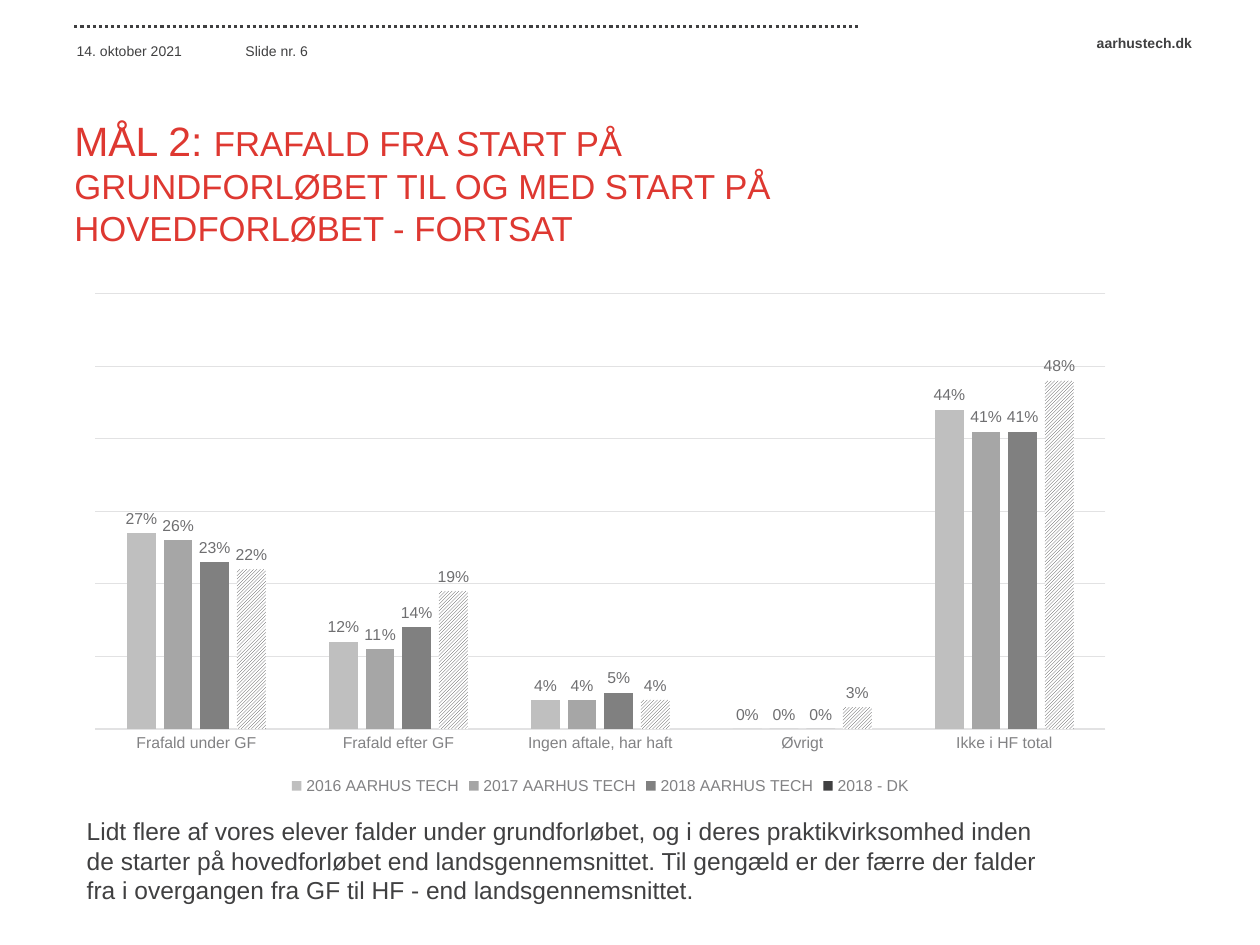
from lxml.etree import SubElement
from pptx import Presentation
from pptx.chart.data import CategoryChartData
from pptx.dml.color import RGBColor
from pptx.enum.chart import (XL_CHART_TYPE, XL_LABEL_POSITION,
                             XL_LEGEND_POSITION, XL_TICK_MARK)
from pptx.enum.dml import MSO_LINE, MSO_PATTERN
from pptx.enum.shapes import MSO_CONNECTOR
from pptx.enum.text import MSO_ANCHOR, PP_ALIGN
from pptx.oxml.ns import qn
from pptx.util import Inches, Pt

FACE = "Arial"
DARK = RGBColor(0x40, 0x40, 0x41)
RULE = RGBColor(0x3F, 0x3F, 0x40)
RED = RGBColor(0xDE, 0x38, 0x31)
AXIS = RGBColor(0x82, 0x82, 0x84)
LABEL = RGBColor(0x6F, 0x6F, 0x71)
GRID = RGBColor(0xE2, 0xE2, 0xE3)
WHITE = RGBColor(0xFF, 0xFF, 0xFF)

CATS = ["Frafald under GF", "Frafald efter GF", "Ingen aftale, har haft",
        "Øvrigt", "Ikke i HF total"]
SERIES = [
    ("2016 AARHUS TECH", (0.27, 0.12, 0.04, 0, 0.44), RGBColor(0xBF, 0xBF, 0xBF)),
    ("2017 AARHUS TECH", (0.26, 0.11, 0.04, 0, 0.41), RGBColor(0xA6, 0xA6, 0xA6)),
    ("2018 AARHUS TECH", (0.23, 0.14, 0.05, 0, 0.41), RGBColor(0x80, 0x80, 0x80)),
    ("2018 - DK", (0.22, 0.19, 0.04, 0.03, 0.48), DARK),
]


def set_font(font, size, color, bold=False):
    font.name = FACE
    font.size = Pt(size)
    font.bold = bold
    font.color.rgb = color


def add_text(slide, box, runs, color=DARK, bold=False, align=PP_ALIGN.LEFT,
             anchor=MSO_ANCHOR.TOP, inset=True):
    """Add one paragraph made of (text, size) runs."""
    frame = slide.shapes.add_textbox(*map(Inches, box)).text_frame
    frame.word_wrap = True
    frame.vertical_anchor = anchor
    if not inset:
        frame.margin_left = frame.margin_right = 0
        frame.margin_top = frame.margin_bottom = 0
    para = frame.paragraphs[0]
    para.alignment = align
    for text, size in runs:
        run = para.add_run()
        run.text = text
        set_font(run.font, size, color, bold)


def add_rule(slide, left, right, top):
    line = slide.shapes.add_connector(
        MSO_CONNECTOR.STRAIGHT, Inches(left), Inches(top), Inches(right), Inches(top))
    line.line.color.rgb = RULE
    line.line.width = Pt(1.75)
    line.line.dash_style = MSO_LINE.ROUND_DOT
    SubElement(line._element.spPr, qn("a:effectLst"))


def style_axes(chart):
    cat = chart.category_axis
    cat.major_tick_mark = cat.minor_tick_mark = XL_TICK_MARK.NONE
    set_font(cat.tick_labels.font, 9, AXIS)
    val = chart.value_axis
    val.visible = False
    val.minimum_scale, val.maximum_scale, val.major_unit = 0, 0.6, 0.1
    val.has_major_gridlines = True
    for line in (cat.format.line, val.major_gridlines.format.line):
        line.color.rgb = GRID
        line.width = Pt(0.75)


def style_bars(series, color):
    series.format.fill.solid()
    series.format.fill.fore_color.rgb = color
    labels = series.data_labels
    labels.show_value = True
    labels.number_format = "0%"
    labels.number_format_is_linked = False
    labels.position = XL_LABEL_POSITION.OUTSIDE_END
    set_font(labels.font, 9, LABEL)


def hatch(series):
    for i in range(len(CATS)):
        fill = series.points[i].format.fill
        fill.patterned()
        fill.pattern = MSO_PATTERN.DARK_UPWARD_DIAGONAL
        fill.fore_color.rgb = DARK
        fill.back_color.rgb = WHITE


def add_bars(slide, box):
    data = CategoryChartData(number_format="0%")
    data.categories = CATS
    for name, vals, _ in SERIES:
        data.add_series(name, vals)
    chart = slide.shapes.add_chart(
        XL_CHART_TYPE.COLUMN_CLUSTERED, *map(Inches, box), data).chart
    set_font(chart.font, 10, DARK)
    chart.has_title = False
    chart.has_legend = True
    chart.legend.position = XL_LEGEND_POSITION.BOTTOM
    chart.legend.include_in_layout = False
    set_font(chart.legend.font, 9, AXIS)
    style_axes(chart)
    plot = chart.plots[0]
    plot.gap_width, plot.overlap = 219, -27
    plot.vary_by_categories = False
    for series, (_, _, color) in zip(plot.series, SERIES):
        style_bars(series, color)
    hatch(plot.series[-1])


def main():
    deck = Presentation()
    deck.slide_width, deck.slide_height = Inches(10), Inches(7.5)
    slide = deck.slides.add_slide(deck.slide_layouts[6])

    # Header
    add_rule(slide, 0.59, 6.81, 0.21)
    add_text(slide, (7.83, 0.22, 1.73, 0.24), [("aarhustech.dk", 8)],
             bold=True, align=PP_ALIGN.RIGHT, anchor=MSO_ANCHOR.MIDDLE)
    for left, text in ((0.51, "14. oktober 2021"), (1.85, "Slide nr. 6")):
        add_text(slide, (left, 0.21, 1.26, 0.31), [(text, 8)],
                 anchor=MSO_ANCHOR.BOTTOM)

    # Title
    add_text(slide, (0.59, 0.92, 6.77, 0.87),
             [("MÅL 2: ", 23.4),
              ("FRAFALD FRA START PÅ GRUNDFORLØBET TIL OG MED START PÅ "
               "HOVEDFORLØBET - FORTSAT", 19.8)],
             color=RED, inset=False)

    # Chart and comment
    add_bars(slide, (0.59, 2.25, 8.35, 4.1))
    add_text(slide, (0.59, 6.43, 7.76, 0.81),
             [("Lidt flere af vores elever falder under grundforløbet, og i deres "
               "praktikvirksomhed inden de starter på hovedforløbet end "
               "landsgennemsnittet. Til gengæld er der færre der falder fra i "
               "overgangen fra GF til HF - end landsgennemsnittet.", 14)])

    deck.save("out.pptx")


if __name__ == "__main__":
    main()
